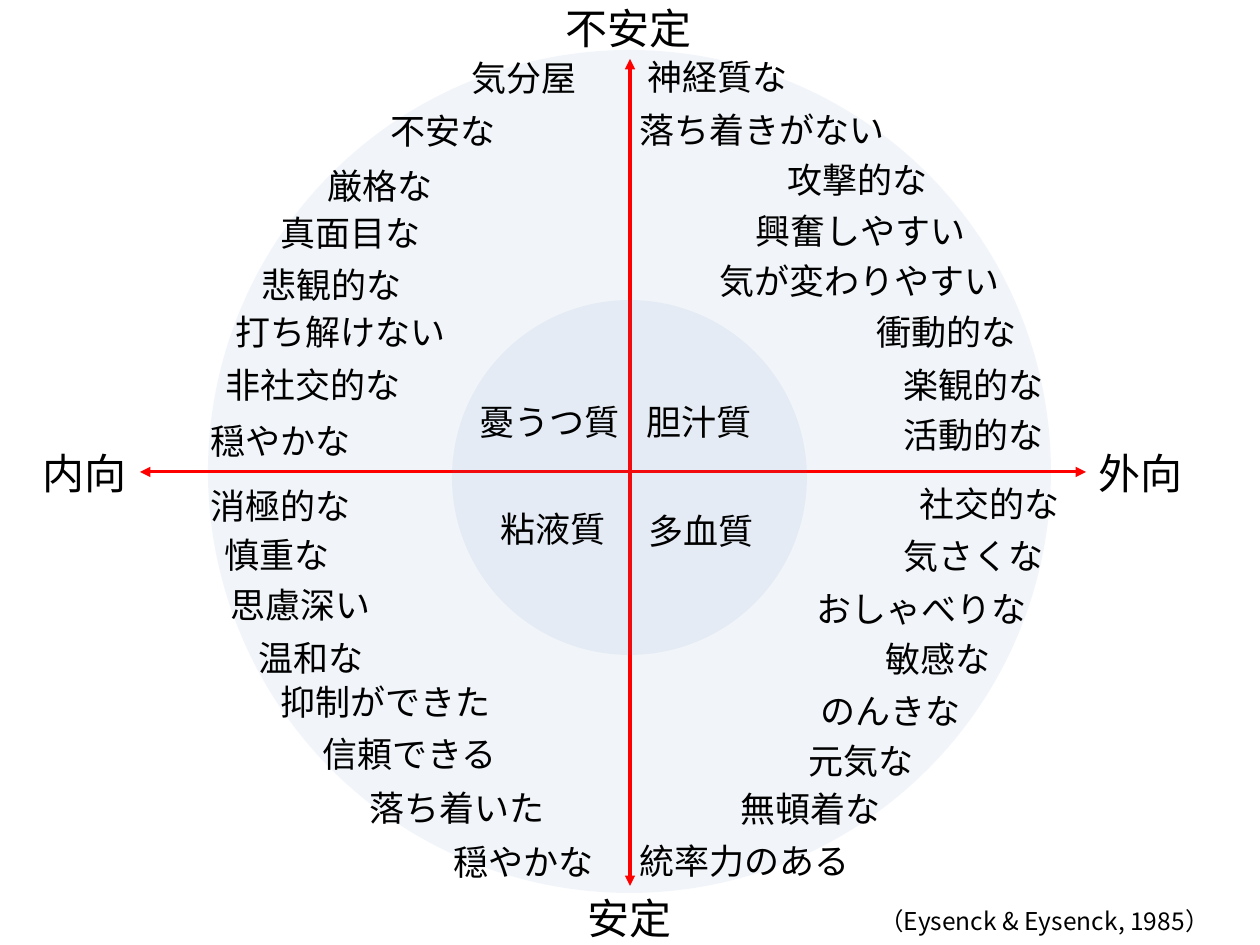
import pptx
import pptx.dml.color
import pptx.enum.shapes
import pptx.enum.text
import pptx.oxml
import pptx.oxml.ns
import pptx.util

BLACK = pptx.dml.color.RGBColor(0x00, 0x00, 0x00)
RED = pptx.dml.color.RGBColor(0xFF, 0x00, 0x00)
BLUE = pptx.dml.color.RGBColor(0x4F, 0x81, 0xBD)

SCALE = 914400 / 126  # EMU in one px
WIDTH, HEIGHT = 1260, 945
CENTRE_X, AXIS_Y = 630, 472

AXIS_SIZE, TRAIT_SIZE, SOURCE_SIZE = 24, 20, 14

# Each entry is text, left, top
AXIS_ENDS = [
    ("外向", 1086, 441),
    ("内向", 30, 441),
    ("不安定", 553, -4),
    ("安定", 575, 886),
]

TEMPERAMENTS = [
    ("胆汁質", 634, 394),
    ("多血質", 636, 503),
    ("憂うつ質", 467, 394),
    ("粘液質", 488, 501),
]

UNSTABLE_EXTRAVERT = [
    ("神経質な", 635, 49),
    ("落ち着きがない", 627, 102),
    ("攻撃的な", 775, 152),
    ("興奮しやすい", 743, 203),
    ("気が変わりやすい", 707, 253),
    ("衝動的な", 864, 304),
    ("楽観的な", 891, 357),
    ("活動的な", 891, 407),
]

STABLE_EXTRAVERT = [
    ("社交的な", 907, 476),
    ("気さくな", 891, 528),
    ("おしゃべりな", 804, 581),
    ("敏感な", 873, 631),
    ("のんきな", 808, 683),
    ("元気な", 796, 733),
    ("無頓着な", 728, 781),
    ("統率力のある", 627, 833),
]

UNSTABLE_INTROVERT = [
    ("気分屋", 459, 50),
    ("不安な", 378, 103),
    ("厳格な", 315, 158),
    ("真面目な", 268, 205),
    ("悲観的な", 249, 257),
    ("打ち解けない", 223, 304),
    ("非社交的な", 213, 357),
    ("穏やかな", 198, 413),
]

STABLE_INTROVERT = [
    ("消極的な", 198, 478),
    ("慎重な", 212, 527),
    ("思慮深い", 218, 577),
    ("温和な", 246, 630),
    ("抑制ができた", 268, 674),
    ("信頼できる", 310, 726),
    ("落ち着いた", 357, 780),
    ("穏やかな", 441, 834),
]


def px(length):
    return pptx.util.Emu(round(length * SCALE))


def add_element(parent, tag, **attributes):
    element = pptx.oxml.parse_xml(f"<{tag} {pptx.oxml.ns.nsdecls('a')}/>")
    for name, value in attributes.items():
        element.set(name, value)
    parent.append(element)


class Painter:
    """Holds the style and the current slide."""

    font_name = "Noto Sans CJK JP"
    frame_format = {
        "word_wrap": False,
        "auto_size": pptx.enum.text.MSO_AUTO_SIZE.SHAPE_TO_FIT_TEXT,
    }

    def __init__(self, slide):
        self.slide = slide

    def circle(self, left, top, diameter):
        shape = self.slide.shapes.add_shape(
            pptx.enum.shapes.MSO_SHAPE.OVAL,
            px(left), px(top), px(diameter), px(diameter))
        shape.shadow.inherit = False
        shape.line.fill.background()
        shape.fill.solid()
        shape.fill.fore_color.rgb = BLUE
        colour = shape.fill._xPr.find(".//" + pptx.oxml.ns.qn("a:srgbClr"))
        add_element(colour, "a:alpha", val="8000")

    def text(self, content, left, top, size, width=None):
        # A box fits its full-width characters plus the side insets
        width = width or round(1.775 * size * len(content)) + 25
        box = self.slide.shapes.add_textbox(
            px(left), px(top), px(width), px(2 * size + 15))
        for name, value in self.frame_format.items():
            setattr(box.text_frame, name, value)
        span = box.text_frame.paragraphs[0].add_run()
        span.text = content
        font_format = {"name": self.font_name, "size": pptx.util.Pt(size)}
        for name, value in font_format.items():
            setattr(span.font, name, value)
        span.font.color.rgb = BLACK
        add_element(span.font._element, "a:ea", typeface=self.font_name)

    def texts(self, entries, size):
        for content, left, top in entries:
            self.text(content, left, top, size)

    def double_arrow(self, start_x, start_y, end_x, end_y):
        arrow = self.slide.shapes.add_connector(
            pptx.enum.shapes.MSO_CONNECTOR.STRAIGHT,
            px(start_x), px(start_y), px(end_x), px(end_y))
        arrow.line.color.rgb = RED
        arrow.line.width = pptx.util.Pt(1.75)
        for tag in ("a:headEnd", "a:tailEnd"):
            add_element(arrow.line._ln, tag, type="triangle")
        add_element(arrow._element.spPr, "a:effectLst")


def main():
    deck = pptx.Presentation()
    deck.slide_width, deck.slide_height = px(WIDTH), px(HEIGHT)
    painter = Painter(deck.slides.add_slide(deck.slide_layouts[6]))

    # Outer circle with axis ends and traits
    painter.circle(208, 50, 843)
    painter.texts(AXIS_ENDS, AXIS_SIZE)
    for traits in (UNSTABLE_EXTRAVERT, STABLE_EXTRAVERT,
                   UNSTABLE_INTROVERT, STABLE_INTROVERT):
        painter.texts(traits, TRAIT_SIZE)

    # Axes
    painter.double_arrow(140, AXIS_Y, 1086, AXIS_Y)
    painter.double_arrow(CENTRE_X, 59, CENTRE_X, 886)

    # Inner circle with the four temperaments
    painter.circle(452, 300, 355)
    painter.texts(TEMPERAMENTS, TRAIT_SIZE)

    # Source
    painter.text("（Eysenck & Eysenck, 1985）", 867, 900, SOURCE_SIZE, width=402)

    deck.save("out.pptx")


if __name__ == "__main__":
    main()
